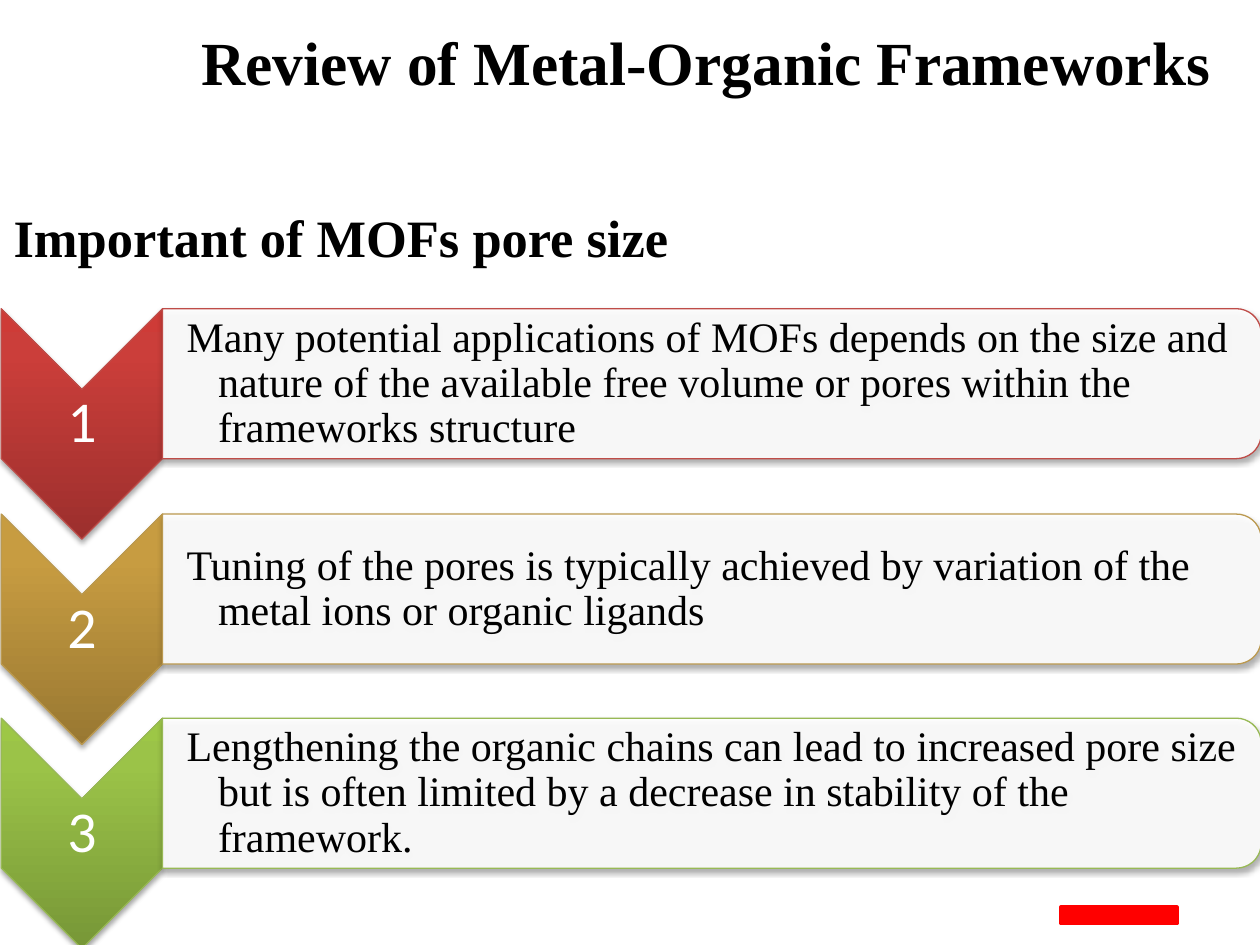
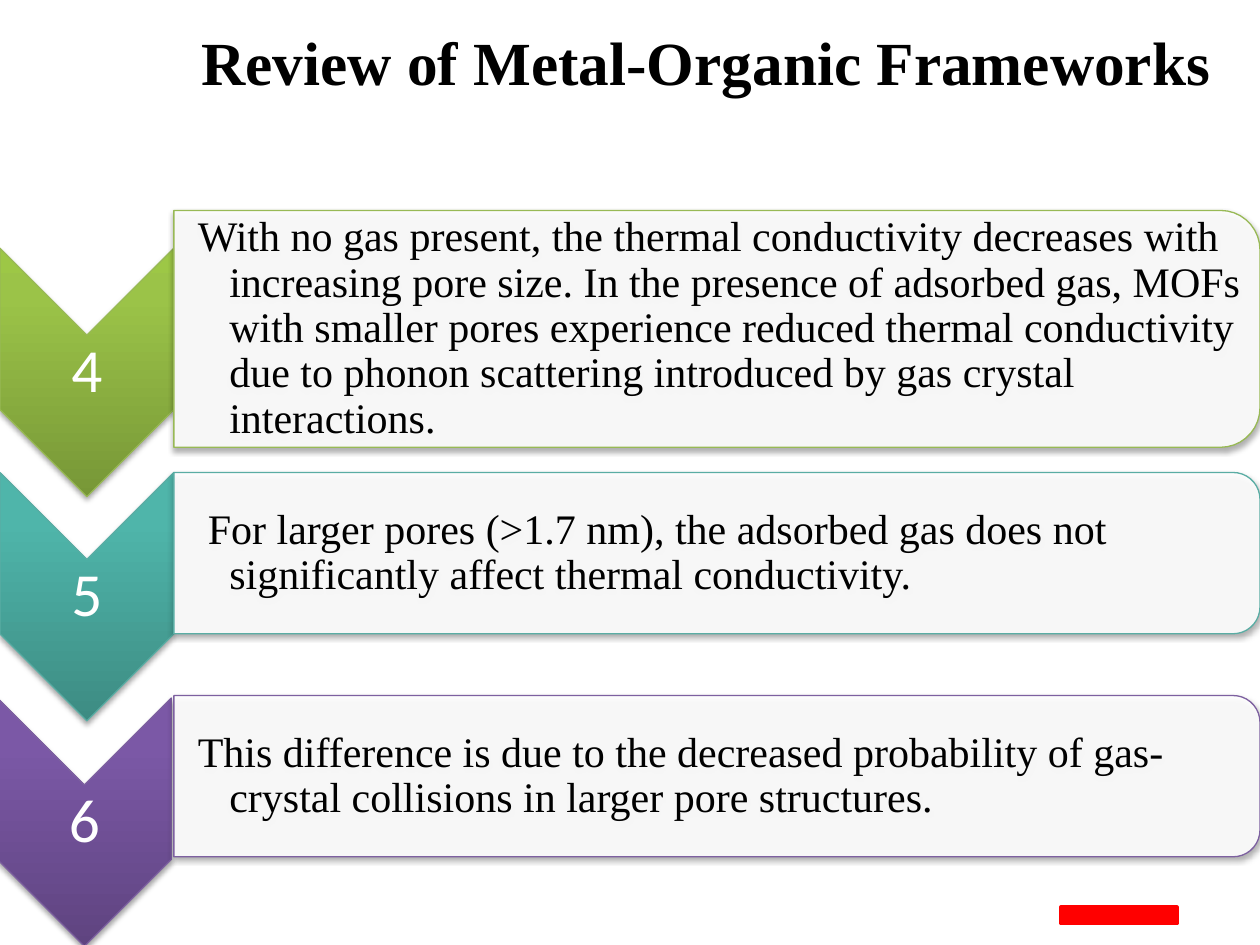
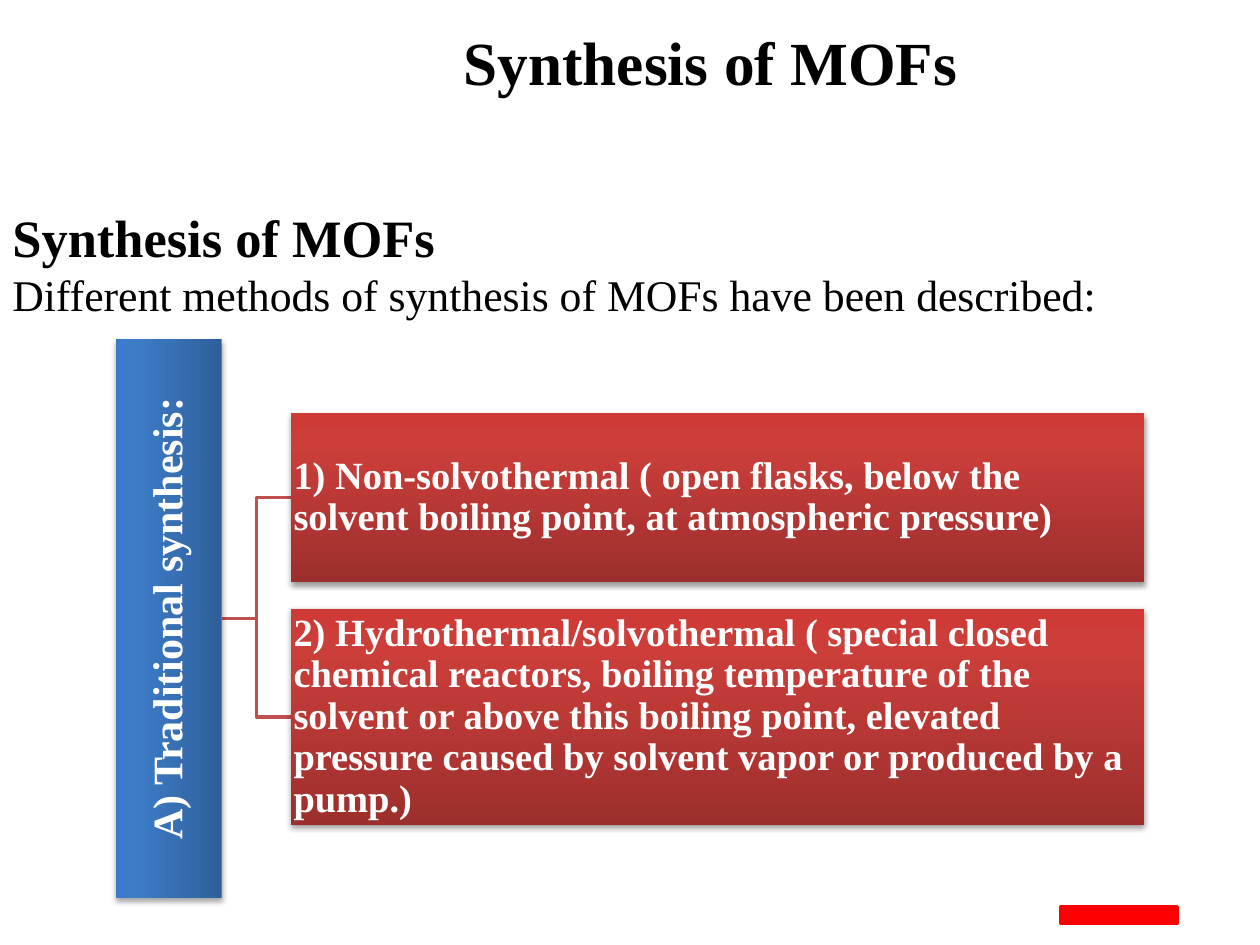
"""Build three slides on metal-organic frameworks: pore size and synthesis."""
import math

import pptx
import pptx.dml.color
import pptx.enum.shapes
import pptx.enum.text
import pptx.oxml
import pptx.oxml.ns
import pptx.util
from copy import deepcopy

Inches = pptx.util.Inches
Pt = pptx.util.Pt
RGBColor = pptx.dml.color.RGBColor
SHAPE = pptx.enum.shapes.MSO_SHAPE
ALIGN = pptx.enum.text.PP_ALIGN
ANCHOR = pptx.enum.text.MSO_ANCHOR
qn = pptx.oxml.ns.qn

BLACK = RGBColor(0x00, 0x00, 0x00)
WHITE = RGBColor(0xFF, 0xFF, 0xFF)
FOOTER_RED = RGBColor(0xFF, 0x00, 0x00)
BRACKET_RED = RGBColor(0xC0, 0x50, 0x4D)
RED_LINE = RGBColor(0xBF, 0x4C, 0x48)
GOLD_LINE = RGBColor(0xBB, 0x99, 0x4F)
GREEN_LINE = RGBColor(0x98, 0xB9, 0x55)
TEAL_LINE = RGBColor(0x5A, 0xAD, 0xA4)
PURPLE_LINE = RGBColor(0x7D, 0x60, 0xA0)
RED = [RGBColor(0x9C, 0x2F, 0x2D), RGBColor(0xCB, 0x3E, 0x3A), RGBColor(0xCE, 0x3B, 0x37)]
GOLD = [RGBColor(0x99, 0x78, 0x32), RGBColor(0xC7, 0x9C, 0x41), RGBColor(0xCA, 0x9D, 0x3F)]
GREEN = [RGBColor(0x77, 0x97, 0x37), RGBColor(0x9B, 0xC3, 0x48), RGBColor(0x9D, 0xC7, 0x46)]
TEAL = [RGBColor(0x3D, 0x8C, 0x83), RGBColor(0x4F, 0xB5, 0xAA), RGBColor(0x4E, 0xB8, 0xAC)]
PURPLE = [RGBColor(0x5F, 0x44, 0x80), RGBColor(0x7B, 0x58, 0xA6), RGBColor(0x7C, 0x57, 0xA8)]
BLUE = [RGBColor(0x2F, 0x5F, 0x99), RGBColor(0x3D, 0x7C, 0xC7), RGBColor(0x3A, 0x7C, 0xCB)]

REVIEW = "Review of Metal-Organic Frameworks"


def write(shape, text, size, color=BLACK, font="Times New Roman", bold=False, align=ALIGN.LEFT,
          anchor=ANCHOR.TOP, insets=(0.1, 0.05, 0.1, 0.05), spacing=1.0, hanging=(0, 0)):
    frame = shape.text_frame
    frame.word_wrap = True
    frame.vertical_anchor = anchor
    frame.margin_left, frame.margin_top, frame.margin_right, frame.margin_bottom = map(Inches, insets)
    para = frame.add_paragraph() if frame.text else frame.paragraphs[0]
    para.alignment = align
    para.line_spacing = spacing
    if any(hanging):
        properties = para._p.get_or_add_pPr()
        properties.set("marL", str(Inches(hanging[0])))
        properties.set("indent", str(Inches(hanging[1])))
    span = para.add_run()
    span.text = text
    span.font.name = font
    span.font.size = Pt(size)
    span.font.bold = bold
    span.font.color.rgb = color


def finish(shape, colors, line=None, opacity=100, shade=35, drop=1.8):
    if len(colors) == 1:
        shape.fill.solid()
        shape.fill.fore_color.rgb = colors[0]
        color = shape._element.spPr.find(qn("a:solidFill"))[0]
        color.append(color.makeelement(qn("a:alpha"), {"val": str(opacity * 1000)}))
    else:
        shape.fill.gradient()
        shape.fill.gradient_angle = 90
        stops = shape._element.spPr.find(qn("a:gradFill")).find(qn("a:gsLst"))
        stops.append(deepcopy(stops[0]))
        for stop, position, color in zip(shape.fill.gradient_stops, (0, 0.8, 1), colors):
            stop.position = position
            stop.color.rgb = color
    if line is None:
        shape.line.fill.background()
    else:
        shape.line.color.rgb = line
        shape.line.width = Pt(0.75)
    shape.shadow.inherit = False
    shape._element.spPr.find(qn("a:effectLst")).append(pptx.oxml.parse_xml(
        f'<a:outerShdw {pptx.oxml.ns.nsdecls("a")} blurRad="{Pt(3.1)}" dist="{Pt(drop)}" '
        f'dir="5400000" rotWithShape="0"><a:srgbClr val="000000">'
        f'<a:alpha val="{shade * 1000}"/></a:srgbClr></a:outerShdw>'))


deck = pptx.Presentation()
deck.slide_width = Inches(10)
deck.slide_height = Inches(7.5)

pages = []
for title, align in [(REVIEW, ALIGN.LEFT), (REVIEW, ALIGN.LEFT), ("Synthesis of MOFs", ALIGN.CENTER)]:
    page = deck.slides.add_slide(deck.slide_layouts[6])
    pages.append(page)
    bar = page.shapes.add_shape(SHAPE.RECTANGLE, Inches(8.42), Inches(7.2), Inches(0.92), Inches(0.13))
    bar.shadow.inherit = False
    bar.fill.solid()
    bar.fill.fore_color.rgb = FOOTER_RED
    bar.line.color.rgb = FOOTER_RED
    bar.line.width = Pt(2)
    box = page.shapes.add_textbox(Inches(1.5), Inches(0.14), Inches(8.28), Inches(0.69))
    write(box, title, 35, bold=True, align=align)

pore_page, gas_page, synthesis_page = pages

# page, number, chevron left, top, width, panel left, top, height, colours, line, first indent, text
steps = [
    (pore_page, 0.01, 2.45, 1.28, 1.29, 2.45, 1.19, RED, RED_LINE, -0.25,
     "Many potential applications of MOFs depends on the size and nature of the available free "
     "volume or pores within the frameworks structure"),
    (pore_page, 0.01, 4.08, 1.28, 1.29, 4.08, 1.19, GOLD, GOLD_LINE, -0.25,
     "Tuning of the pores is typically achieved by variation of the metal ions or organic ligands"),
    (pore_page, 0.01, 5.7, 1.28, 1.29, 5.7, 1.19, GREEN, GREEN_LINE, -0.25,
     "Lengthening the organic chains can lead to increased pore size but is often limited by a "
     "decrease in stability of the framework."),
    (gas_page, 0, 1.97, 1.38, 1.38, 1.67, 1.88, GREEN, GREEN_LINE, -0.25,
     "With no gas present, the thermal conductivity decreases with increasing pore size. In the "
     "presence of adsorbed gas, MOFs with smaller pores experience reduced thermal conductivity due "
     "to phonon scattering introduced by gas crystal interactions."),
    (gas_page, 0, 3.75, 1.38, 1.38, 3.75, 1.28, TEAL, TEAL_LINE, -0.17,
     "For larger pores (>1.7 nm), the adsorbed gas does not significantly affect thermal conductivity."),
    (gas_page, -0.02, 5.54, 1.38, 1.38, 5.52, 1.28, PURPLE, PURPLE_LINE, -0.25,
     "This difference is due to the decreased probability of gas-crystal collisions in larger pore "
     "structures."),
]
for number, step in enumerate(steps, 1):
    page, left, top, width, panel_left, panel_top, panel_height, colors, line, indent, text = step
    half = width / 2
    right, bottom = left + width, top + width / 0.7
    chevron_points = [(right, top), (right, bottom - half), (left + half, bottom),
                      (left, bottom - half), (left, top), (left + half, top + half)]

    radius = panel_height / 6
    panel_right, panel_bottom = panel_left + 8.62 + (0.1 if page is pore_page else 0), panel_top + panel_height
    panel_points = [(panel_left, panel_bottom), (panel_left, panel_top)]
    for center_y, start in [(panel_top + radius, -90), (panel_bottom - radius, 0)]:
        for degrees in range(start, start + 91, 10):
            angle = math.radians(degrees)
            panel_points.append((panel_right - radius + radius * math.cos(angle),
                                 center_y + radius * math.sin(angle)))

    outlines = []
    for points in (chevron_points, panel_points):
        corners = [(Inches(x), Inches(y)) for x, y in points]
        builder = page.shapes.build_freeform(*corners[0])
        builder.add_line_segments(corners[1:], close=True)
        outlines.append(builder.convert_to_shape())
    chevron, panel = outlines
    finish(chevron, colors, line)
    write(chevron, str(number), 33 if page is pore_page else 35, color=WHITE, font="Calibri",
          align=ALIGN.CENTER, anchor=ANCHOR.MIDDLE, insets=(0.02, half + 0.02, 0.02, half + 0.02),
          spacing=0.9)
    finish(panel, [WHITE], line, opacity=90)
    inset = panel_height * 0.06
    write(panel, text, 24, anchor=ANCHOR.MIDDLE, insets=(0.19, inset, inset, inset),
          spacing=0.9, hanging=(0.25, indent))

box = pore_page.shapes.add_textbox(Inches(0.01), Inches(1.58), Inches(6.67), Inches(0.61))
write(box, "Important of MOFs pore size", 30, bold=True)

box = synthesis_page.shapes.add_textbox(Inches(0), Inches(1.58), Inches(10), Inches(3.43))
write(box, "Synthesis of MOFs", 30, bold=True)
write(box, "Different methods of synthesis of MOFs have been described:", 25)

for target_y in (5.69, 3.95):
    bracket = synthesis_page.shapes.add_connector(
        pptx.enum.shapes.MSO_CONNECTOR.ELBOW, Inches(1.76), Inches(4.91), Inches(2.31), Inches(target_y))
    bracket.line.color.rgb = BRACKET_RED
    bracket.line.width = Pt(2)
    properties = bracket._element.spPr
    properties.append(properties.makeelement(qn("a:effectLst"), {}))

methods = [
    (-0.88, 4.49, 4.44, 0.84, 270, BLUE, 24, ALIGN.CENTER, 35, 1.8, "A) Traditional synthesis:"),
    (2.31, 3.28, 6.77, 1.34, 0, RED, 22, ALIGN.LEFT, 38, 1.6,
     "1) Non-solvothermal ( open flasks, below the solvent boiling point, at atmospheric pressure)"),
    (2.31, 4.83, 6.77, 1.72, 0, RED, 22, ALIGN.LEFT, 38, 1.6,
     "2) Hydrothermal/solvothermal ( special closed chemical reactors, boiling temperature of the "
     "solvent or above this boiling point, elevated pressure caused by solvent vapor or produced by "
     "a pump.)"),
]
for left, top, width, height, rotation, colors, size, align, shade, drop, text in methods:
    block = synthesis_page.shapes.add_shape(
        SHAPE.RECTANGLE, Inches(left), Inches(top), Inches(width), Inches(height))
    block.rotation = rotation
    finish(block, colors, shade=shade, drop=drop)
    write(block, text, size, color=WHITE, bold=True, align=align, anchor=ANCHOR.MIDDLE,
          insets=(0.02, 0.02, 0.02, 0.02), spacing=0.9)

deck.save("out.pptx")
